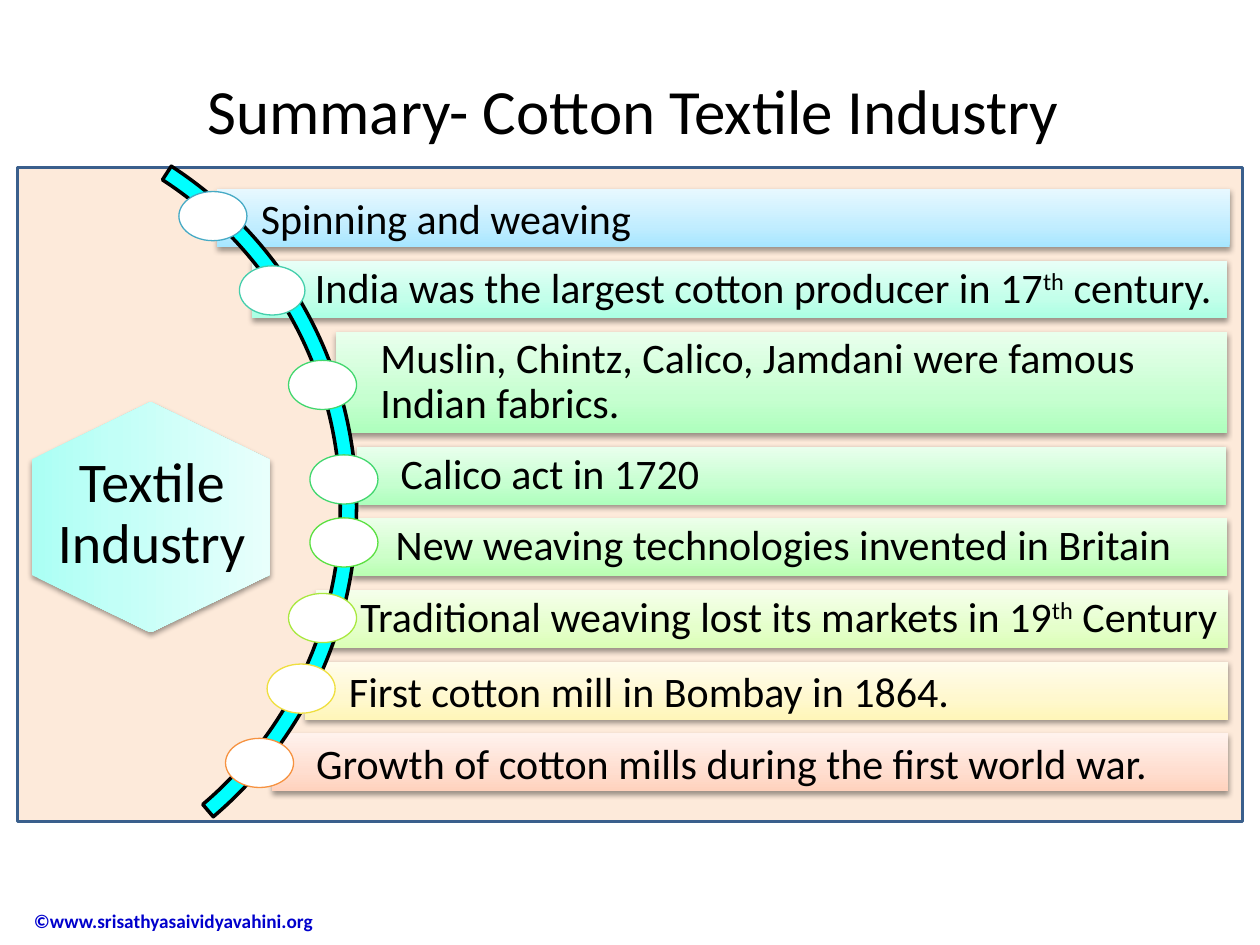
from copy import deepcopy
from dataclasses import dataclass

from lxml import etree
from pptx import Presentation
from pptx import util as u
from pptx.dml.color import RGBColor
from pptx.enum import shapes, text
from pptx.oxml.ns import qn


@dataclass(frozen=True)
class Theme:
    font: str = "Calibri"
    ink: str = "000000"
    white: str = "FFFFFF"
    footer: str = "0000CC"
    panel: str = "FDEADA"
    panel_line: str = "3A5F8C"
    arc: str = "00FFFF"
    title_size: float = 36
    hub_size: float = 32
    bar_size: float = 24
    footer_size: float = 11
    blue: tuple = ("A7E6FF", "C1EDFF", "E7F8FF")
    mint: tuple = ("ABFFE3", "C3FFEA", "E8FFF7")
    green: tuple = ("AEFFBD", "C6FFD0", "E9FFED")
    leaf: tuple = ("B9FFB2", "CDFFC9", "ECFFEA")
    lime: tuple = ("DBFFB6", "E5FFCB", "F5FFEB")
    yellow: tuple = ("FFF6B9", "FFF8CE", "FFFCEC")
    orange: tuple = ("FFD2BD", "FFDED0", "FFF2ED")
    aqua: tuple = ("AAFFF4", "C2FFF7", "E8FFFC")


THEME = Theme()
SHAPE = shapes.MSO_SHAPE
LEFT, CENTER = text.PP_ALIGN.LEFT, text.PP_ALIGN.CENTER
TOP, MIDDLE = text.MSO_ANCHOR.TOP, text.MSO_ANCHOR.MIDDLE

BAR_TOP, BAR_BOTTOM = 1.5, 6.28
# Text runs (every second one is raised), left, width, height, left inset,
# line spacing, gradient, then the marker's left, top, width and outline
BARS = [
    (["Spinning and weaving"],
     1.72, 8.04, 0.46, 0.35, 1.0, THEME.blue, 1.42, 1.52, 0.54, "46AAC5"),
    (["India was the largest cotton producer in 17", "th", " century."],
     2.0, 7.74, 0.46, 0.5, 0.9, THEME.mint, 1.9, 2.11, 0.52, "44CEAC"),
    (["Muslin, Chintz, Calico, Jamdani were famous Indian fabrics."],
     2.67, 7.07, 0.8, 0.35, 0.9, THEME.green, 2.29, 2.86, 0.54, "42D76E"),
    (["Calico act in 1720"],
     2.83, 6.9, 0.46, 0.35, 0.9, THEME.green, 2.46, 3.61, 0.54, "42D76E"),
    (["New weaving technologies invented in Britain"],
     2.79, 6.95, 0.46, 0.35, 0.9, THEME.leaf, 2.46, 4.11, 0.54, "5BE041"),
    (["Traditional weaving lost its markets in 19", "th", " Century"],
     2.51, 7.24, 0.46, 0.35, 0.9, THEME.lime, 2.29, 4.71, 0.54, "A9E840"),
    (["First cotton mill in Bombay in 1864."],
     2.42, 7.33, 0.46, 0.35, 1.0, THEME.yellow, 2.12, 5.27, 0.54, "EFDF40"),
    (["Growth of cotton mills during the first world war."],
     2.16, 7.59, 0.46, 0.35, 1.0, THEME.orange, 1.79, 5.86, 0.54, "F69240"),
]


class SlideBuilder:
    def __init__(self, deck, theme):
        self.theme = theme
        self.page = deck.slides.add_slide(deck.slide_layouts[5])

    def add_text(self, box, runs, size, color=None, bold=False, align=LEFT,
                 anchor=MIDDLE, insets=(0.1, 0.05, 0.1, 0.05), spacing=1.0, indent=0):
        frame = box.text_frame
        frame.word_wrap = True
        frame.vertical_anchor = anchor
        (frame.margin_left, frame.margin_top,
         frame.margin_right, frame.margin_bottom) = map(u.Inches, insets)
        para = frame.paragraphs[0]
        para.alignment = align
        para.line_spacing = spacing
        if indent:
            para._p.get_or_add_pPr().set("marL", str(u.Inches(indent)))
        for index, words in enumerate(runs):
            span = para.add_run()
            span.text = words
            span.font.name = self.theme.font
            span.font.size = u.Pt(size)
            span.font.bold = bold
            span.font.color.rgb = RGBColor.from_string(color or self.theme.ink)
            if index % 2:
                span.font._element.set("baseline", "30000")

    def title(self, words, place):
        box = self.page.shapes.title
        box.left, box.top, box.width, box.height = map(u.Inches, place)
        self.add_text(box, [words], self.theme.title_size, align=CENTER, anchor=TOP)
        box.text_frame.auto_size = text.MSO_AUTO_SIZE.SHAPE_TO_FIT_TEXT

    def label(self, runs, place, size, **style):
        box = self.page.shapes.add_textbox(*map(u.Inches, place))
        self.add_text(box, runs, size, **style)

    def shape(self, kind, place, fill=None, line=None, weight=2.0):
        shape = self.page.shapes.add_shape(kind, *map(u.Inches, place))
        shape.shadow.inherit = False
        if fill:
            shape.fill.solid()
            shape.fill.fore_color.rgb = RGBColor.from_string(fill)
        if line:
            shape.line.color.rgb = RGBColor.from_string(line)
            shape.line.width = u.Pt(weight)
        else:
            shape.line.fill.background()
        return shape

    def glossy(self, kind, place, colors):
        """A shape with a three-stop gradient and a soft shadow below it."""
        shape = self.shape(kind, place)
        shape.fill.gradient()
        shape.fill.gradient_angle = 90
        stops = shape._element.spPr.find(".//" + qn("a:gsLst"))
        stops.insert(1, deepcopy(stops[0]))
        for stop, position, color in zip(shape.fill.gradient_stops, (0, 0.35, 1), colors):
            stop.position = position
            stop.color.rgb = RGBColor.from_string(color)
        effects = shape._element.spPr.find(qn("a:effectLst"))
        shadow = etree.SubElement(effects, qn("a:outerShdw"), blurRad="40000",
                                  dist="20000", dir="5400000", rotWithShape="0")
        tint = etree.SubElement(shadow, qn("a:srgbClr"), val=self.theme.ink)
        etree.SubElement(tint, qn("a:alpha"), val="38000")
        return shape


def main():
    deck = Presentation()
    deck.slide_width, deck.slide_height = u.Inches(10), u.Inches(7.5)
    slide = SlideBuilder(deck, THEME)

    # Title, footer and background panel
    slide.title("Summary- Cotton Textile Industry", (1.47, 0.52, 7.11, 0.71))
    slide.label(["©www.srisathyasaividyavahini.org"], (-0.33, 7.1, 3.02, 0.41),
                THEME.footer_size, color=THEME.footer, bold=True, indent=0.5)
    slide.shape(SHAPE.RECTANGLE, (0.14, 1.33, 9.72, 5.19), THEME.panel, THEME.panel_line)

    # Bars, stacked with equal gaps
    heights = [bar[3] for bar in BARS]
    gap = (BAR_BOTTOM - BAR_TOP - sum(heights)) / (len(BARS) - 1)
    top = BAR_TOP
    for runs, left, width, height, inset, spacing, colors, *_ in BARS:
        bar = slide.glossy(SHAPE.RECTANGLE, (left, top, width, height), colors)
        slide.add_text(bar, runs, THEME.bar_size, spacing=spacing,
                       insets=(inset, 0.06, 0.06, 0.06))
        top += height + gap

    # Hub hexagon with its upright label
    hub = slide.glossy(SHAPE.HEXAGON, (0.28, 3.16, 1.83, 1.89), THEME.aqua)
    hub.rotation = 90
    hub.adjustments[0] = 0.25
    slide.label(["Textile Industry"], (0.39, 3.79, 1.63, 0.59), THEME.hub_size,
                align=CENTER, insets=(0, 0, 0, 0), spacing=0.9)

    # Arc and the markers along it
    arc = slide.shape(SHAPE.BLOCK_ARC, (-3.62, 0.8, 6.45, 6.45), THEME.arc, THEME.ink)
    for index, value in enumerate((181.78, 29.79, 0.02)):
        arc.adjustments[index] = value
    for *_, left, marker_top, width, outline in BARS:
        slide.shape(SHAPE.OVAL, (left, marker_top, width, 0.39), THEME.white, outline, 0.75)

    deck.save("out.pptx")


if __name__ == "__main__":
    main()
